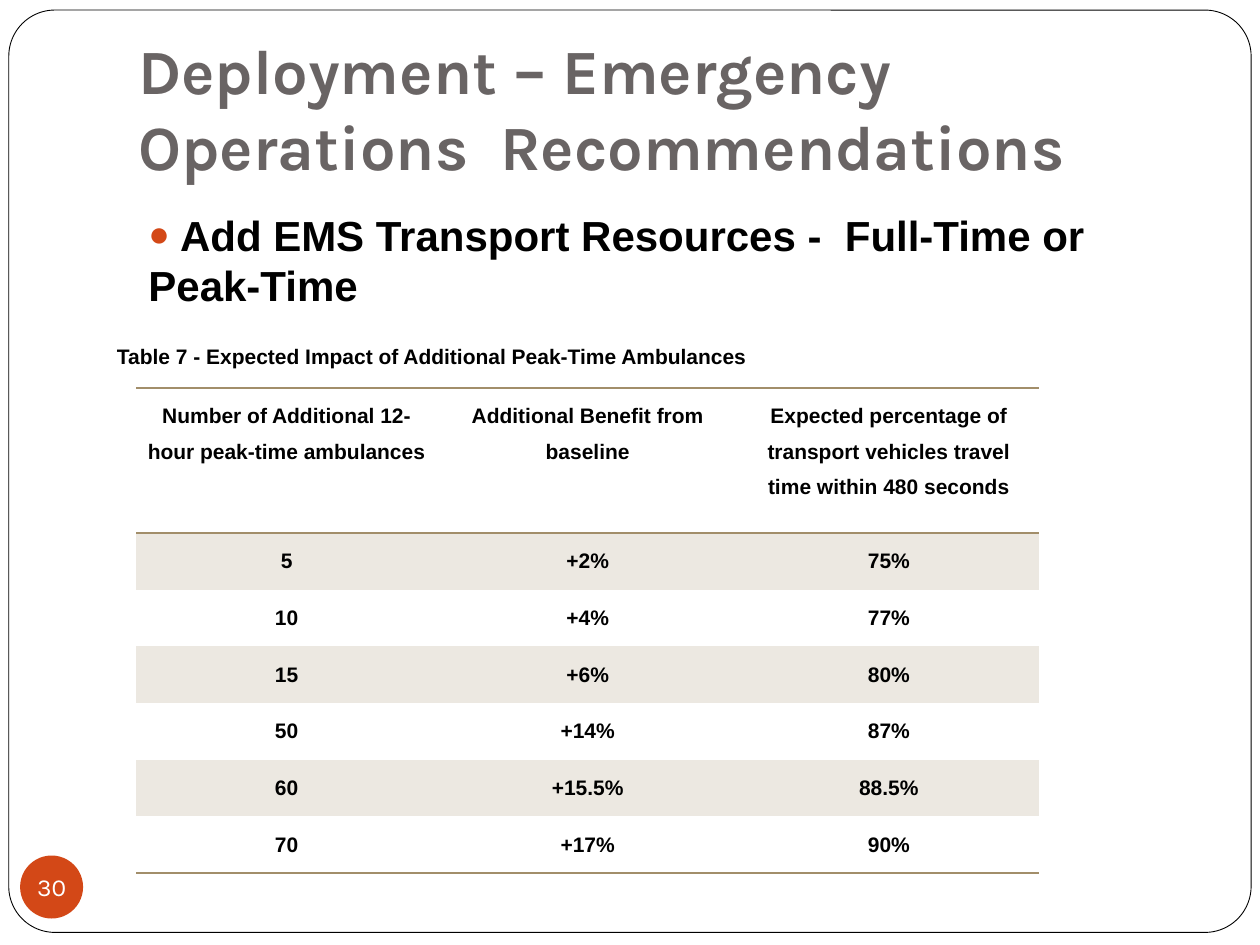
from dataclasses import dataclass

from lxml import etree
from pptx import Presentation
from pptx import util as u
from pptx.dml.color import RGBColor
from pptx.enum import shapes, text
from pptx.oxml.ns import qn


@dataclass(frozen=True)
class Theme:
    """Colours, fonts and type sizes of the slide."""
    white: str = "FFFFFF"
    black: str = "000000"
    grey: str = "696464"
    red: str = "D34817"
    tan: str = "A28E6A"
    band: str = "ECE8E1"
    head: str = "Karla"
    body: str = "Arial"
    big: int = 36
    mid: int = 24
    small: int = 12
    badge: int = 14


T = Theme()
PLAIN = "{2D5ABB26-0587-4C30-8999-92F81FD0307C}"
ROWS = [
    ("Number of Additional 12-hour peak-time ambulances",
     "Additional Benefit from baseline",
     "Expected percentage of transport vehicles travel time within 480 seconds"),
    ("5", "+2%", "75%"),
    ("10", "+4%", "77%"),
    ("15", "+6%", "80%"),
    ("50", "+14%", "87%"),
    ("60", "+15.5%", "88.5%"),
    ("70", "+17%", "90%"),
]


def inch(box):
    """Turn a box of numbers into lengths."""
    return [u.Inches(n) for n in box]


def node(parent, tag, **attrs):
    """Append an XML child and return it."""
    child = etree.SubElement(parent, qn(tag))
    for key, val in attrs.items():
        child.set(key, val)
    return child


def write(frame, words, size=T.small, font=T.body, color=T.black, bold=True,
          align=text.PP_ALIGN.LEFT, space=None, before=None):
    """Write one formatted paragraph and return it."""
    para = frame.paragraphs[0]
    para.alignment = align
    if space:
        para.line_spacing = space
    if before:
        para.space_before = u.Pt(before)
    run = para.add_run()
    run.text = words
    run.font.size = u.Pt(size)
    run.font.name = font
    run.font.bold = bold
    run.font.color.rgb = RGBColor.from_string(color)
    return para


def label(slide, box, words, anchor=text.MSO_ANCHOR.TOP, foot=0.05, **style):
    """Place a wrapped text box and return its paragraph."""
    frame = slide.shapes.add_textbox(*inch(box)).text_frame
    frame.word_wrap = True
    frame.vertical_anchor = anchor
    frame.margin_bottom = u.Inches(foot)
    return write(frame, words, **style)


def solid(slide, kind, box, fill, line=None):
    """Place a flat preset shape."""
    shape = slide.shapes.add_shape(kind, *inch(box))
    shape.shadow.inherit = False
    shape.fill.solid()
    shape.fill.fore_color.rgb = RGBColor.from_string(fill)
    if line:
        shape.line.color.rgb = RGBColor.from_string(line)
        shape.line.width = u.Pt(0.5)
    else:
        shape.line.fill.background()
    return shape


def border(slide, box):
    """Draw the rounded frame around the slide."""
    shape = solid(slide, shapes.MSO_SHAPE.ROUNDED_RECTANGLE, box, T.white, T.black)
    shape.adjustments[0] = 0.05


def title(slide, box):
    """Place the slide title."""
    label(slide, box, "Deployment – Emergency Operations  Recommendations",
          anchor=text.MSO_ANCHOR.BOTTOM, foot=0.1,
          size=T.big, font=T.head, color=T.grey)


def point(slide, box):
    """Place the bulleted main point."""
    para = label(slide, box, " Add EMS Transport Resources -  Full-Time or Peak-Time",
                 size=T.mid, before=5.8)
    props = para._p.get_or_add_pPr()
    props.set("marL", "0")
    props.set("indent", "0")
    node(node(props, "a:buClr"), "a:srgbClr", val=T.red)
    node(props, "a:buSzPct", val="85000")
    node(props, "a:buFont", typeface=T.body)
    node(props, "a:buChar", char="●")


def rule(cell, sides):
    """Draw tan rules on the given sides of a cell."""
    props = cell._tc.get_or_add_tcPr()
    for spot, side in enumerate(sides):
        line = node(props, f"a:ln{side}", w=str(u.Pt(1)))
        node(node(line, "a:solidFill"), "a:srgbClr", val=T.tan)
        props.insert(spot, line)


def grid(slide, box, head=1.15, row=0.45):
    """Place the table of expected impact."""
    cols = len(ROWS[0])
    table = slide.shapes.add_table(len(ROWS), cols, *inch(box)).table
    table._tbl.tblPr.find(qn("a:tableStyleId")).text = PLAIN
    for col in table.columns:
        col.width = u.Inches(box[2] / cols)
    for r, words in enumerate(ROWS):
        table.rows[r].height = u.Inches(row if r else head)
        sides = "TB" if r == 0 else "B" if r == len(ROWS) - 1 else ""
        for c, word in enumerate(words):
            cell = table.cell(r, c)
            cell.margin_left = cell.margin_right = u.Inches(0.04)
            cell.margin_top = cell.margin_bottom = u.Inches(0.04)
            write(cell.text_frame, word, align=text.PP_ALIGN.CENTER, space=1.5)
            if r % 2:
                cell.fill.solid()
                cell.fill.fore_color.rgb = RGBColor.from_string(T.band)
            else:
                cell.fill.background()
            rule(cell, sides)


def badge(slide, box):
    """Place the round page number."""
    frame = solid(slide, shapes.MSO_SHAPE.OVAL, box, T.red).text_frame
    frame.margin_left = frame.margin_right = 0
    frame.margin_top = frame.margin_bottom = 0
    frame.word_wrap = False
    frame.vertical_anchor = text.MSO_ANCHOR.MIDDLE
    write(frame, "30", size=T.badge, font=T.head, color=T.white, bold=False,
          align=text.PP_ALIGN.CENTER)


def main():
    """Build and save the slide."""
    deck = Presentation()
    deck.slide_width, deck.slide_height = inch((10, 7.5))
    slide = deck.slides.add_slide(deck.slide_layouts[6])
    border(slide, (0.07, 0.08, 9.86, 7.32))
    title(slide, (1, 0.3, 8.5, 1.25))
    point(slide, (1.08, 1.61, 8.5, 1.06))
    grid(slide, (1.08, 3.08, 7.17, 3.83))
    label(slide, (0.83, 2.58, 9, 0.5),
          "Table 7 - Expected Impact of Additional Peak-Time Ambulances",
          anchor=text.MSO_ANCHOR.MIDDLE)
    badge(slide, (0.16, 6.79, 0.5, 0.5))
    deck.save("out.pptx")


if __name__ == "__main__":
    main()
